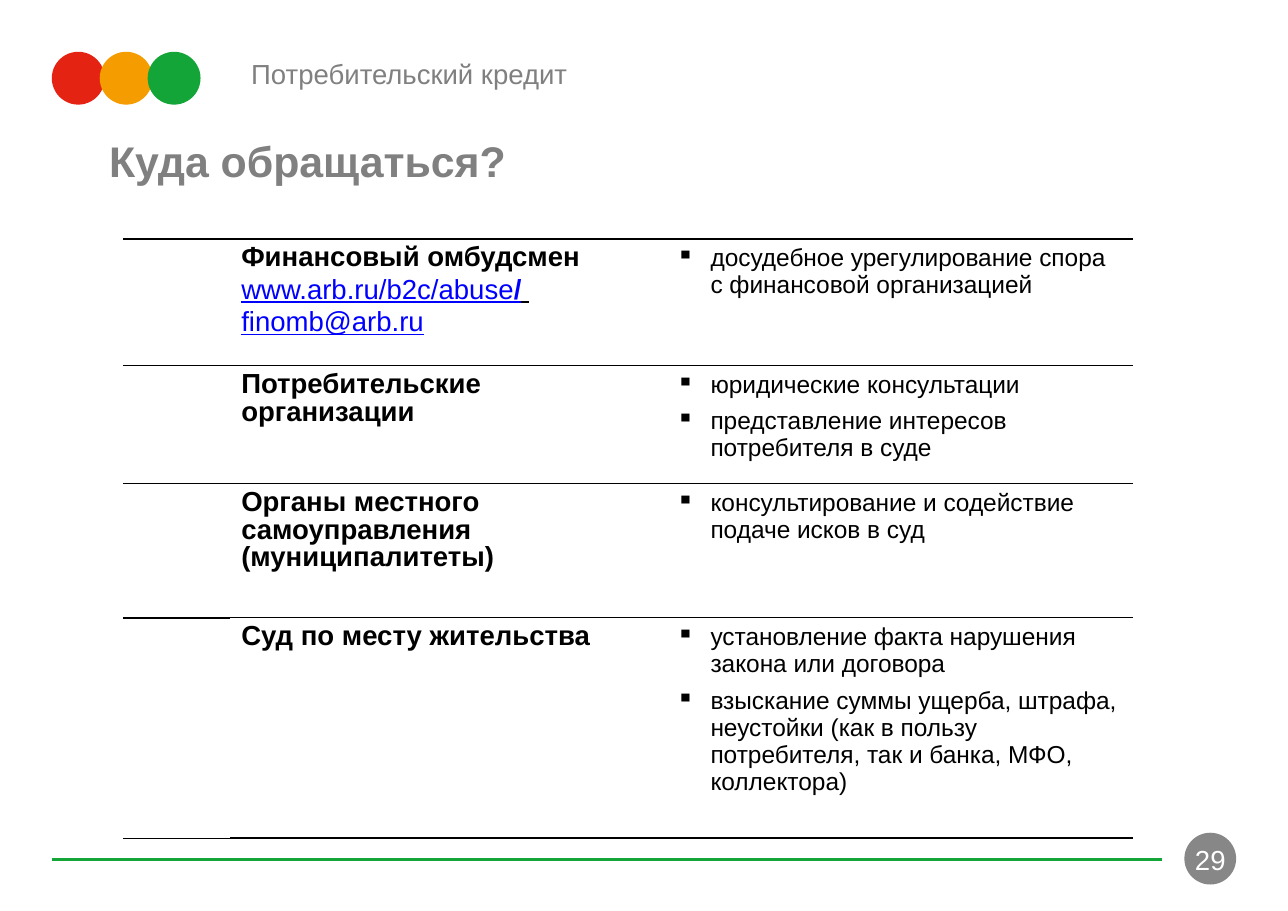
"""Build the slide on where borrowers can turn for help."""
import lxml.etree
import pptx
import pptx.dml.color
import pptx.enum.shapes
import pptx.enum.text
import pptx.oxml
import pptx.oxml.ns
import pptx.util

Inches, Pt = pptx.util.Inches, pptx.util.Pt
SHAPE = pptx.enum.shapes.MSO_SHAPE
ALIGN = pptx.enum.text.PP_ALIGN
ANCHOR = pptx.enum.text.MSO_ANCHOR
qn = pptx.oxml.ns.qn

TOPIC = "Потребительский кредит"
TITLE = "Куда обращаться?"
PAGE = "29"
ROWS = [
    (1.15,
     [[("Финансовый омбудсмен", "name")],
      [("www.arb.ru/b2c/abuse", "link"), ("/", "slash"), (" ", "gap")],
      [("finomb@arb.ru", "link")]],
     ["досудебное урегулирование спора с финансовой организацией"]),
    (1.07,
     [[("Потребительские организации", "name")]],
     ["юридические консультации",
      "представление интересов \vпотребителя в суде"]),
    (1.22,
     [[("Органы местного самоуправления (муниципалитеты)", "name")]],
     ["консультирование и содействие подаче исков в суд"]),
    (2.0,
     [[("Суд по месту жительства", "name")]],
     ["установление факта нарушения закона или договора",
      "взыскание суммы ущерба, штрафа, неустойки (как в пользу "
      "потребителя, так и банка, МФО, коллектора)"]),
]
COLS = [0.97, 3.57, 0.38, 4.24]

THEME = {
    "font": "Arial",
    "lights": ["E42313", "F59C00", "13A538"],
    "badge": "878787",
    "rule": "13A538",
    "border": "000000",
    "looks": {
        "topic": ("808080", {"size": Pt(18), "bold": False}),
        "title": ("808080", {"size": Pt(28), "bold": True}),
        "page": ("FFFFFF", {"size": Pt(18), "bold": False}),
        "name": ("000000", {"size": Pt(18), "bold": True}),
        "link": ("0000FF", {"size": Pt(18), "bold": False, "underline": True}),
        "slash": ("0000FF", {"size": Pt(18), "bold": True, "underline": True}),
        "gap": ("000000", {"size": Pt(18), "bold": True, "underline": True}),
        "item": ("000000", {"size": Pt(16), "bold": False}),
    },
}


def rgb(code):
    """Turn a hex code into a colour."""
    return pptx.dml.color.RGBColor.from_string(code)


def assign(thing, values):
    """Set attributes from a dict."""
    for key, value in values.items():
        setattr(thing, key, value)


def write(frame, paras, form, lead=0, mark=None):
    """Fill a frame with paragraphs of (text, look) runs."""
    for num, runs in enumerate(paras):
        para = frame.paragraphs[0] if num == 0 else frame.add_paragraph()
        props = para._p.get_or_add_pPr()
        hang = Inches(0.31) if mark else 0
        props.set("marL", str(hang))
        props.set("indent", str(-hang))
        if mark:
            bullet = lxml.etree.SubElement(props, qn("a:buChar"))
            bullet.set("char", mark)
        else:
            lxml.etree.SubElement(props, qn("a:buNone"))
        assign(para, {"space_before": Pt(lead if num else 0), **form})
        for text, look in runs:
            color, font = THEME["looks"][look]
            for part, bit in enumerate(text.split("\v")):
                if part:
                    para.add_line_break()
                run = para.add_run()
                run.text = bit
                assign(run.font, {"name": THEME["font"], **font})
                run.font.color.rgb = rgb(color)


def place(shape, box):
    """Move a shape to a box in inches."""
    names = ("left", "top", "width", "height")
    assign(shape, dict(zip(names, map(Inches, box))))


def dot(slide, left, top, size, color):
    """Draw a plain disc."""
    disc = slide.shapes.add_shape(
        SHAPE.OVAL, *map(Inches, (left, top, size, size)))
    disc.shadow.inherit = False
    disc.fill.solid()
    disc.fill.fore_color.rgb = rgb(color)
    disc.line.fill.background()


def edge(cell, tops):
    """Draw the top and bottom borders of a cell and hide its sides."""
    props = cell._tc.get_or_add_tcPr()
    for tag, wide in zip(("lnL", "lnR", "lnT", "lnB"), (0, 0, *tops)):
        line = lxml.etree.SubElement(props, qn("a:" + tag), w=str(Pt(wide)))
        if wide:
            fill = lxml.etree.SubElement(line, qn("a:solidFill"))
            lxml.etree.SubElement(fill, qn("a:srgbClr"), val=THEME["border"])
        else:
            lxml.etree.SubElement(line, qn("a:noFill"))
    cell.fill.background()


def fill_grid(slide):
    """Add the table of bodies and their help."""
    high = [row[0] for row in ROWS]
    box = map(Inches, (1.12, 2.17, sum(COLS), sum(high)))
    grid = slide.shapes.add_table(len(ROWS), len(COLS), *box).table
    assign(grid, {"first_row": False, "horz_banding": False})
    for col, wide in zip(grid.columns, COLS):
        col.width = Inches(wide)
    last = len(ROWS) - 1
    for num, (tall, names, items) in enumerate(ROWS):
        grid.rows[num].height = Inches(tall)
        tops = (0.75 if num else 1.5, 1.5 if num == last else 0.75)
        for col in range(len(COLS)):
            edge(grid.cell(num, col), tops if col else (1, 1))
        write(grid.cell(num, 1).text_frame, names,
              {"line_spacing": 0.9}, lead=3)
        write(grid.cell(num, 3).text_frame, [[(item, "item")] for item in items],
              {"space_after": Pt(6)}, mark="▪")


def main():
    """Compose and save the slide."""
    deck = pptx.Presentation()
    assign(deck, {"slide_width": Inches(11.69), "slide_height": Inches(8.27)})
    slide = deck.slides.add_slide(deck.slide_layouts[1])
    for num, color in enumerate(THEME["lights"]):
        dot(slide, 0.47 + 0.435 * num, 0.47, 0.48, color)
    dot(slide, 10.75, 7.56, 0.47, THEME["badge"])
    rule = slide.shapes.add_connector(
        pptx.enum.shapes.MSO_CONNECTOR.STRAIGHT,
        *map(Inches, (0.47, 7.8, 10.55, 7.8)))
    rule.line.color.rgb = rgb(THEME["rule"])
    rule.line.width = Pt(2)
    lxml.etree.SubElement(rule._element.spPr, qn("a:effectLst"))

    title, topic = slide.placeholders
    page = slide.shapes.add_textbox(0, 0, 0, 0)
    texts = [
        (topic, TOPIC, "topic", (2.18, 0.47, 7.5, 0.58), ANCHOR.TOP, ALIGN.LEFT),
        (title, TITLE, "title", (0.89, 1.14, 9.75, 0.63), ANCHOR.MIDDLE, ALIGN.LEFT),
        (page, PAGE, "page", (10.65, 7.56, 0.67, 0.48), ANCHOR.MIDDLE, ALIGN.CENTER),
    ]
    for shape, text, look, box, anchor, align in texts:
        place(shape, box)
        assign(shape.text_frame, {
            "word_wrap": True, "vertical_anchor": anchor,
            "auto_size": pptx.enum.text.MSO_AUTO_SIZE.NONE})
        write(shape.text_frame, [[(text, look)]], {"alignment": align})
    fill_grid(slide)
    deck.save("out.pptx")


if __name__ == "__main__":
    main()
